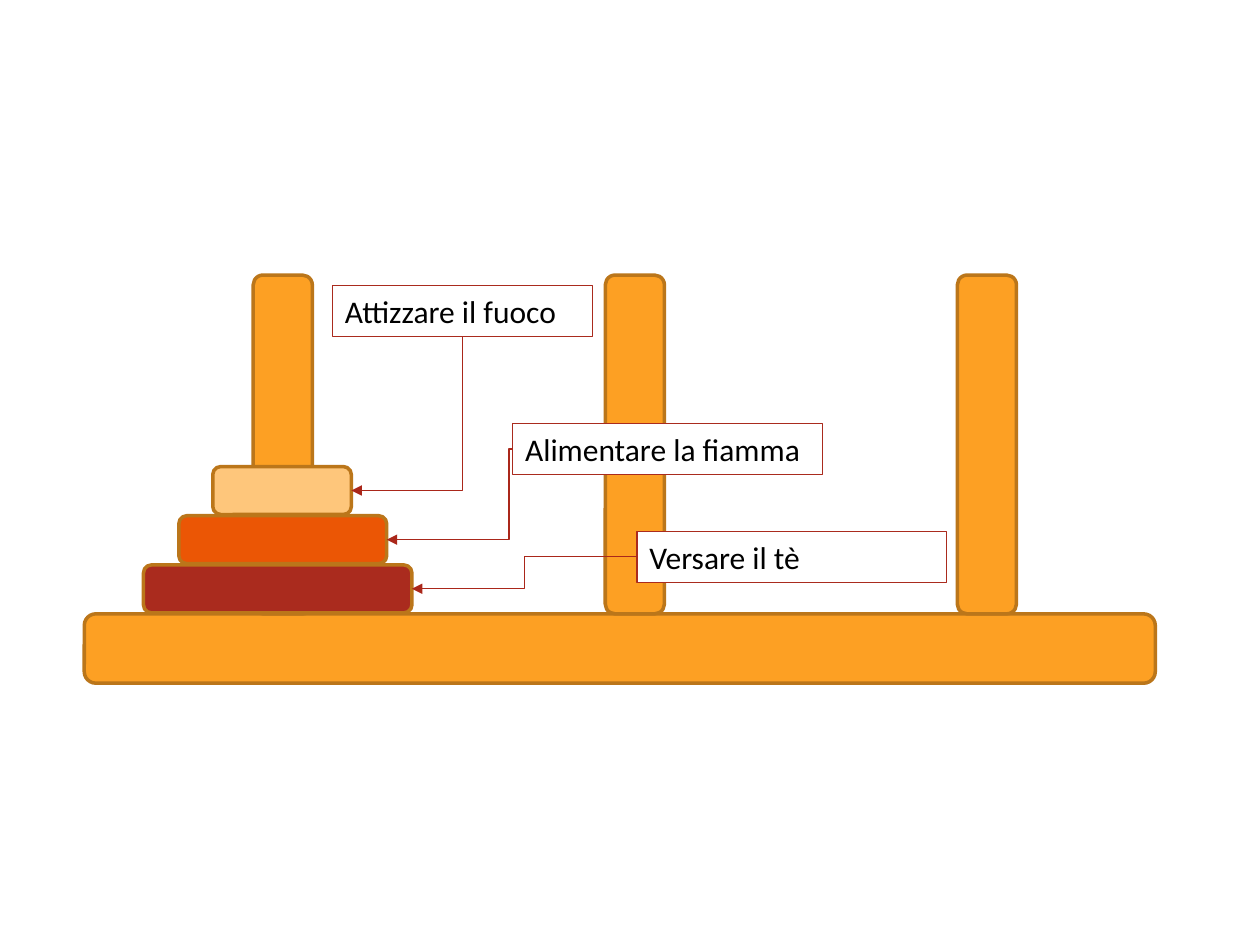
from lxml import etree
from pptx import Presentation
from pptx.dml.color import RGBColor
from pptx.enum.shapes import MSO_CONNECTOR, MSO_SHAPE
from pptx.enum.text import MSO_AUTO_SIZE
from pptx.oxml.ns import qn
from pptx.util import Pt

ORANGE = RGBColor(0xFD, 0xA0, 0x23)
BROWN = RGBColor(0xBB, 0x76, 0x1A)
RED = RGBColor(0xAA, 0x2B, 0x1E)
ARROW_RED = RGBColor(0xAA, 0x27, 0x1A)
DEEP_ORANGE = RGBColor(0xEB, 0x56, 0x05)
PEACH = RGBColor(0xFE, 0xC6, 0x7B)
WHITE = RGBColor(0xFF, 0xFF, 0xFF)
BLACK = RGBColor(0, 0, 0)

ROD_WIDTH, ROD_STEP = 33.8, 201.2
DISK_HEIGHT, DISK_STEP = 27.4, 28.1
LABEL_HEIGHT = 29.1


def add_block(slide, left, top, width, height, color):
    block = slide.shapes.add_shape(
        MSO_SHAPE.ROUNDED_RECTANGLE, Pt(left), Pt(top), Pt(width), Pt(height))
    block.shadow.inherit = False
    block.fill.solid()
    block.fill.fore_color.rgb = color
    block.line.color.rgb = BROWN
    block.line.width = Pt(2)
    return block


def add_stand(slide, left, top, width, height):
    """Base along the bottom of the box, three rods standing on it."""
    base_height = 39.6
    rod_height = height - base_height
    add_block(slide, left, top + rod_height, width, base_height, ORANGE)
    for index in range(3):
        add_block(slide, left + 96.5 + index * ROD_STEP, top,
                  ROD_WIDTH, rod_height, ORANGE)


def add_disks(slide, left, bottom):
    """Stack of disks, listed from the bottom up."""
    disks = [(0, 153.4, RED), (20.2, 118.8, DEEP_ORANGE), (39.6, 79.2, PEACH)]
    return [
        add_block(slide, left + indent, bottom - DISK_HEIGHT - level * DISK_STEP,
                  width, DISK_HEIGHT, color)
        for level, (indent, width, color) in enumerate(disks)
    ]


def add_label(slide, left, top, width, text, filled):
    label = slide.shapes.add_textbox(
        Pt(left), Pt(top), Pt(width), Pt(LABEL_HEIGHT))
    if filled:
        label.fill.solid()
        label.fill.fore_color.rgb = WHITE
    label.line.color.rgb = RED
    label.line.width = Pt(0.75)
    frame = label.text_frame
    frame.word_wrap = True
    frame.auto_size = MSO_AUTO_SIZE.SHAPE_TO_FIT_TEXT
    paragraph = frame.paragraphs[0]
    paragraph.text = text
    paragraph.font.name = "Calibri"
    paragraph.font.size = Pt(18)
    paragraph.font.color.rgb = BLACK
    return label


def add_arrow(slide, disk, label, bend=None):
    """Elbow line with its head at the disk; without a bend it meets the label from below."""
    end_x, end_y = label.left, label.top + label.height // 2
    if bend is None:
        end_x, end_y = label.left + label.width // 2, label.top + label.height
    arrow = slide.shapes.add_connector(
        MSO_CONNECTOR.ELBOW, disk.left + disk.width,
        disk.top + disk.height // 2, end_x, end_y)
    arrow.line.color.rgb = ARROW_RED
    arrow.line.width = Pt(0.75)

    # Route of the elbow
    properties = arrow._element.spPr
    geometry = properties.find(qn("a:prstGeom"))
    if bend is None:
        geometry.set("prst", "bentConnector2")
    else:
        etree.SubElement(geometry.find(qn("a:avLst")), qn("a:gd"),
                         name="adj1", fmla=f"val {round(bend * 100000)}")

    # Arrowhead, no shadow
    etree.SubElement(properties.find(qn("a:ln")), qn("a:headEnd"), type="triangle")
    etree.SubElement(properties, qn("a:effectLst"))


def add_tower_slide(presentation):
    slide = presentation.slides.add_slide(presentation.slide_layouts[6])
    add_stand(slide, 48.2, 157.2, 612, 233.2)
    bottom_disk, middle_disk, top_disk = add_disks(slide, 82, 350.2)

    # Task names
    stoke = add_label(slide, 190, 163.3, 148.6, "Attizzare il fuoco", False)
    feed = add_label(slide, 293, 242, 177, "Alimentare la fiamma", True)
    pour = add_label(slide, 364, 303.7, 177, "Versare il tè", True)

    # Arrows from names to disks
    add_arrow(slide, top_disk, stoke)
    add_arrow(slide, middle_disk, feed, 0.97)
    add_arrow(slide, bottom_disk, pour, 0.5)


def main():
    presentation = Presentation()
    presentation.slide_width = Pt(720)
    presentation.slide_height = Pt(540)
    add_tower_slide(presentation)
    presentation.save("out.pptx")


if __name__ == "__main__":
    main()
